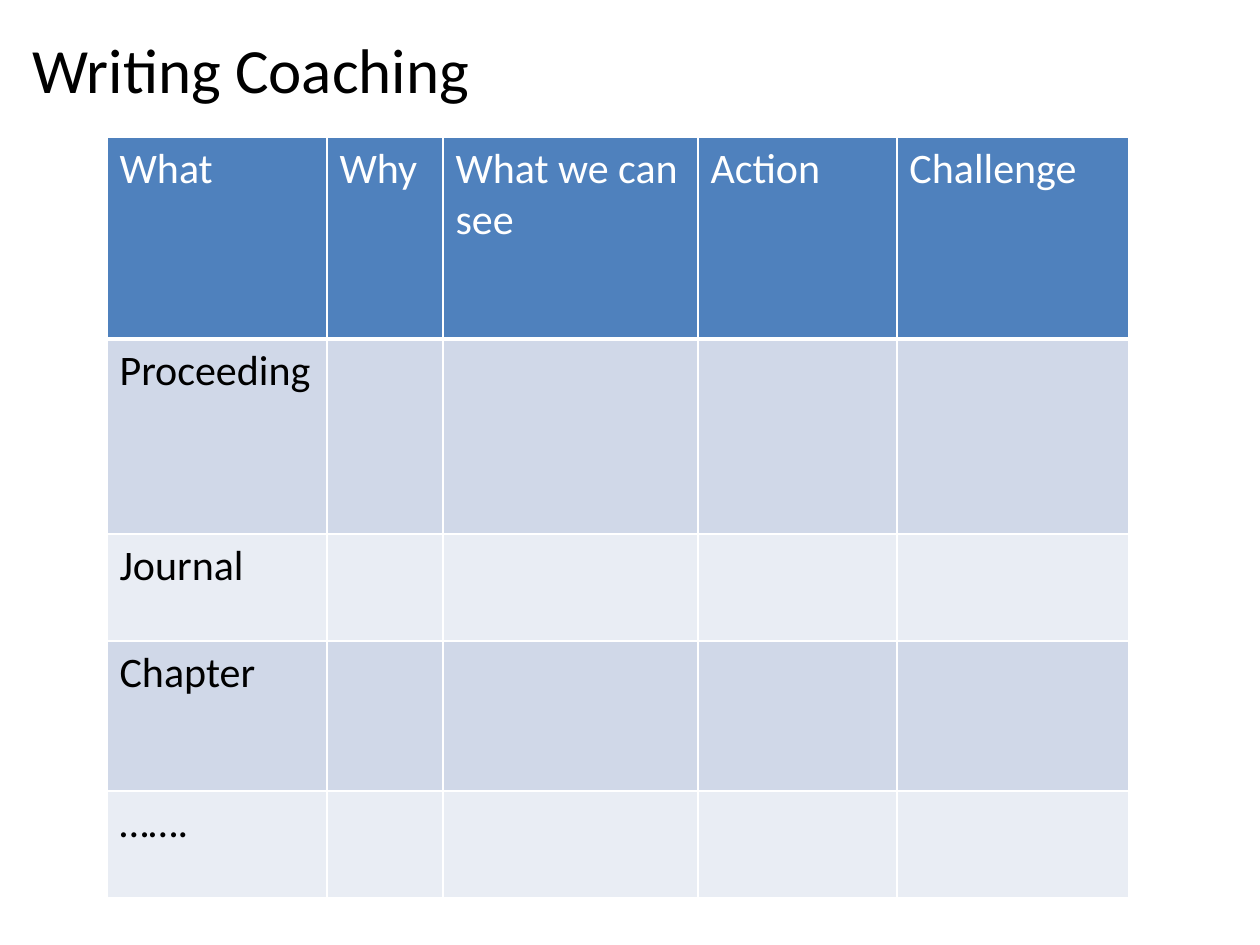
from lxml import etree
from pptx import Presentation
from pptx import util as u
from pptx.dml.color import RGBColor
from pptx.enum import text
from pptx.oxml.ns import qn

PX = 914400 / 126


def px(n):
    return u.Emu(round(n * PX))


def rgb(value):
    return RGBColor.from_string(value)


def write(tf, content, *, size, color, font="Calibri", align=text.PP_ALIGN.LEFT):
    p = tf.paragraphs[0]
    p.alignment = align
    p.font.size, p.font.name = u.Pt(size), font
    p.font.color.rgb = rgb(color)
    if content:
        r = p.add_run()
        r.text = content
        r.font.size, r.font.name = u.Pt(size), font
        r.font.color.rgb = rgb(color)


class Deck:
    WHITE, BLACK, HEADER = "FFFFFF", "000000", "4F81BD"
    BANDS = ("D0D8E8", "E9EDF4")

    def __init__(self, width, height):
        self.prs = Presentation()
        self.prs.slide_width, self.prs.slide_height = px(width), px(height)
        self.s = self.prs.slides.add_slide(self.prs.slide_layouts[5])

    def title(self, content, x, y, w, h):
        sp = self.s.shapes.title
        sp.left, sp.top, sp.width, sp.height = map(px, (x, y, w, h))
        tf = sp.text_frame
        tf.word_wrap = True
        tf.auto_size = text.MSO_AUTO_SIZE.NONE
        tf.vertical_anchor = text.MSO_ANCHOR.MIDDLE
        write(tf, content, size=36, color=self.BLACK)

    def borders(self, cell, bottom):
        # Border lines come before the fill in the cell properties
        tcPr = cell._tc.get_or_add_tcPr()
        for i, (side, pt) in enumerate(zip("LRTB", (1, 1, 1, bottom))):
            ln = etree.Element(qn(f"a:ln{side}"), w=str(u.Pt(pt)))
            fill = etree.SubElement(ln, qn("a:solidFill"))
            etree.SubElement(fill, qn("a:srgbClr"), val=self.WHITE)
            tcPr.insert(i, ln)

    def table(self, rows, x, y, widths, heights):
        frame = self.s.shapes.add_table(len(heights), len(widths), px(x), px(y),
                                        px(sum(widths)), px(sum(heights)))
        tbl = frame.table
        for col, w in zip(tbl.columns, widths):
            col.width = px(w)
        for i, (row, h) in enumerate(zip(tbl.rows, heights)):
            row.height = px(h)
            head = i == 0
            for j, cell in enumerate(row.cells):
                cell.fill.solid()
                cell.fill.fore_color.rgb = rgb(self.HEADER if head else self.BANDS[(i - 1) % 2])
                self.borders(cell, 3 if head else 1)
                write(cell.text_frame, rows[i][j] if j < len(rows[i]) else "",
                      size=24, color=self.WHITE if head else self.BLACK)


def main():
    deck = Deck(1260, 945)

    # Title
    deck.title("Writing Coaching", 20, 19, 774, 98)

    # Coaching plan: header row, then one publication type per row
    deck.table(
        [["What", "Why", "What we can see", "Action", "Challenge"],
         ["Proceeding"], ["Journal"], ["Chapter"], ["……."]],
        107, 137, [220, 116, 255, 199, 232], [202, 195, 107, 150, 107])

    deck.prs.save("out.pptx")


if __name__ == "__main__":
    main()
